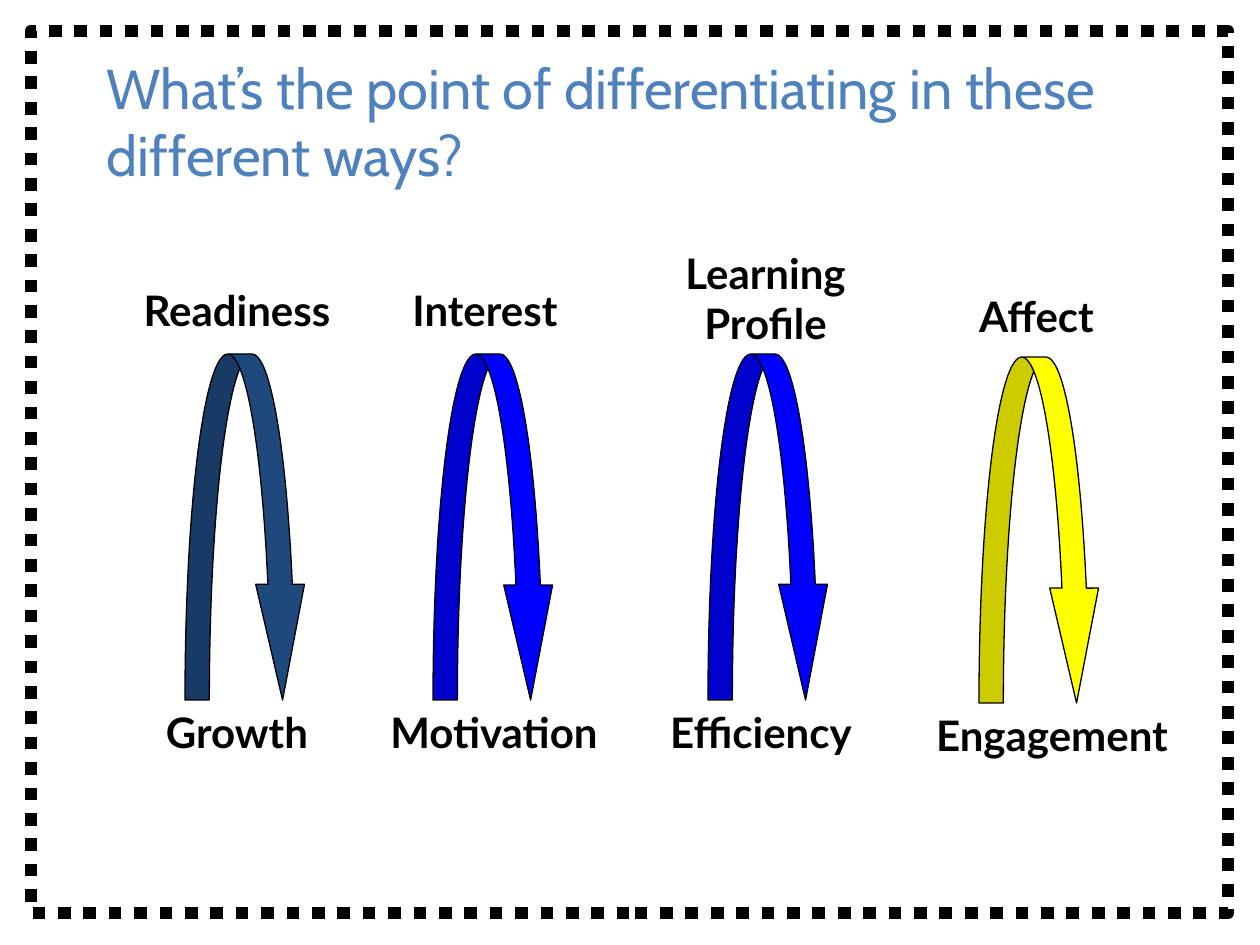
import pptx
import pptx.dml.color
import pptx.enum.dml
import pptx.enum.shapes
import pptx.enum.text
import pptx.util

PX = 914400 / 126
SLIDE_WIDTH, SLIDE_HEIGHT = 1260, 945
ARROW_WIDTH, ARROW_HEIGHT = 122, 346
LABEL_HEIGHT = 63
LINE_HEIGHT = 50
BLACK = "000000"
TITLE_FORMAT = {"name": "Cabin", "size": pptx.util.Pt(32), "bold": False}
LABEL_FORMAT = {"name": "Lato", "size": pptx.util.Pt(24), "bold": True}

# Labels: text, offset from the arrow's left side, width, number of lines.
COLUMNS = [
    {"left": 185, "top": 354, "color": "1F497D", "head": 0.949, "gap": 13,
     "cause": ("Readiness", -94, 292, 1), "effect": ("Growth", -94, 292, 1)},
    {"left": 433, "top": 354, "color": "0000FF", "head": 0.942, "gap": 13,
     "cause": ("Interest", -94, 292, 1), "effect": ("Motivation", -85, 292, 1)},
    {"left": 708, "top": 354, "color": "0000FF", "head": 0.949, "gap": 0,
     "cause": ("Learning Profile", -84, 283, 2), "effect": ("Efficiency", -93, 292, 1)},
    {"left": 979, "top": 357, "color": "FFFF00", "head": 0.942, "gap": 10,
     "cause": ("Affect", -84, 283, 1), "effect": ("Engagement", -94, 334, 1)},
]


def emu(*lengths):
    return [pptx.util.Emu(round(length * PX)) for length in lengths]


def rgb(color):
    return pptx.dml.color.RGBColor.from_string(color)


def write(paragraph, text, font_format, color, alignment):
    paragraph.alignment = alignment
    run = paragraph.add_run()
    run.text = text
    for name, value in font_format.items():
        setattr(run.font, name, value)
    run.font.color.rgb = rgb(color)


def outline(shape, points):
    shape.shadow.inherit = False
    shape.line.color.rgb = rgb(BLACK)
    shape.line.width = pptx.util.Pt(points)


def add_title(slide, left, top, width, height):
    title = slide.shapes.title
    title.left, title.top, title.width, title.height = emu(left, top, width, height)
    title.text_frame.vertical_anchor = pptx.enum.text.MSO_ANCHOR.MIDDLE
    write(title.text_frame.paragraphs[0],
          "What’s the point of differentiating in these different ways?",
          TITLE_FORMAT, "4F81BD", pptx.enum.text.PP_ALIGN.LEFT)


def add_frame(slide, left, top, width, height):
    frame = slide.shapes.add_shape(
        pptx.enum.shapes.MSO_SHAPE.RECTANGLE, *emu(left, top, width, height))
    frame.fill.background()
    outline(frame, 7.25)
    frame.line.dash_style = pptx.enum.dml.MSO_LINE.ROUND_DOT


def add_label(shapes, text, left, top, width, height):
    label = shapes.add_textbox(*emu(left, top, width, height))
    label.text_frame.word_wrap = True
    label.text_frame.auto_size = pptx.enum.text.MSO_AUTO_SIZE.SHAPE_TO_FIT_TEXT
    write(label.text_frame.paragraphs[0], text, LABEL_FORMAT, BLACK,
          pptx.enum.text.PP_ALIGN.CENTER)


def add_column(slide, left, top, color, head, gap, cause, effect):
    """Place an arrow with its cause above and its effect below."""
    shapes = slide.shapes.add_group_shape().shapes
    arrow = shapes.add_shape(pptx.enum.shapes.MSO_SHAPE.CURVED_DOWN_ARROW,
                             *emu(left, top, ARROW_WIDTH, ARROW_HEIGHT))
    for index, value in enumerate((0.2, 0.4, head)):
        arrow.adjustments[index] = value
    arrow.fill.solid()
    arrow.fill.fore_color.rgb = rgb(color)
    outline(arrow, 0.75)

    text, offset, width, lines = cause
    height = LABEL_HEIGHT + (lines - 1) * LINE_HEIGHT
    add_label(shapes, text, left + offset, top - gap - height, width, height)
    text, offset, width, lines = effect
    add_label(shapes, text, left + offset, top + ARROW_HEIGHT, width, LABEL_HEIGHT)


def main():
    presentation = pptx.Presentation()
    presentation.slide_width, presentation.slide_height = emu(SLIDE_WIDTH, SLIDE_HEIGHT)
    slide = presentation.slides.add_slide(presentation.slide_layouts.get_by_name("Title Only"))
    add_title(slide, 94, 42, 1071, 157)
    add_frame(slide, 31, 31, 1197, 882)
    for column in COLUMNS:
        add_column(slide, **column)
    presentation.save("out.pptx")


if __name__ == "__main__":
    main()
